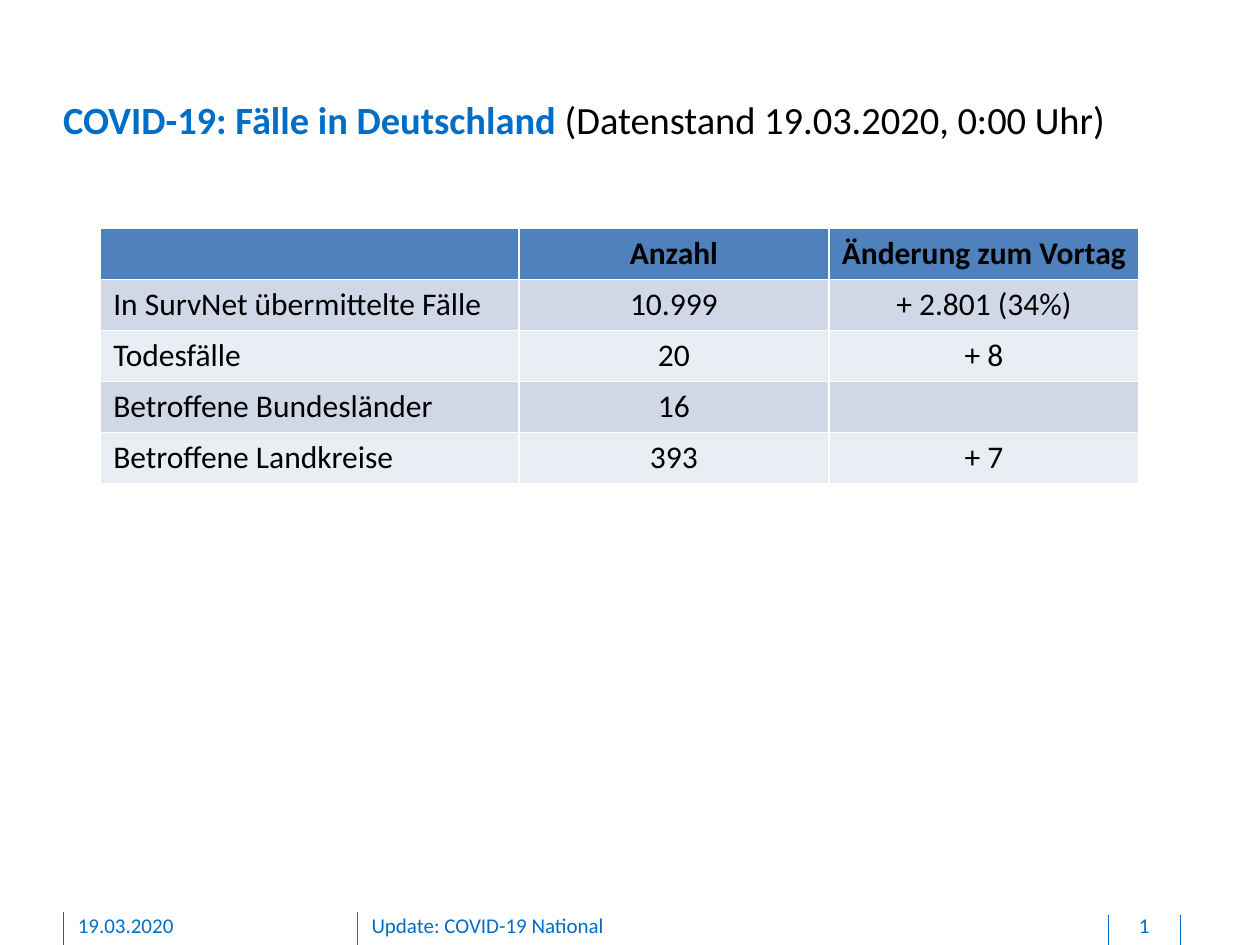
"""Build the COVID-19 case overview slide for Germany."""
from lxml.etree import SubElement
from pptx import Presentation
from pptx.dml.color import RGBColor
from pptx.enum.shapes import MSO_CONNECTOR
from pptx.enum.text import MSO_ANCHOR, PP_ALIGN
from pptx.oxml.ns import qn
from pptx.util import Cm, Pt

BLUE = RGBColor(0x00, 0x6E, 0xC7)
BLACK = RGBColor(0x00, 0x00, 0x00)
HEADER_FILL = RGBColor(0x4F, 0x81, 0xBD)
BAND_FILLS = (RGBColor(0xE9, 0xED, 0xF4), RGBColor(0xD0, 0xD8, 0xE8))
FONT = "Calibri"

TITLE = (
    ("COVID-19: Fälle in Deutschland ", BLUE, True),
    ("(Datenstand 19.03.2020, 0:00 Uhr)", BLACK, False),
)
CASES = (
    ("", "Anzahl", "Änderung zum Vortag"),
    ("In SurvNet übermittelte Fälle", "10.999", "+ 2.801 (34%)"),
    ("Todesfälle", "20", "+ 8"),
    ("Betroffene Bundesländer", "16", ""),
    ("Betroffene Landkreise", "393", "+ 7"),
)
COLUMN_WIDTHS = (8.43, 6.25, 6.25)
ROW_HEIGHT = 1.03
FOOTER = (
    ("19.03.2020", 1.57, 5.16, PP_ALIGN.LEFT),
    ("Update: COVID-19 National", 7.49, 14.4, PP_ALIGN.LEFT),
    ("1", 22.38, 1.37, PP_ALIGN.CENTER),
)
DIVIDERS = ((1.27, 18.39), (7.21, 18.39), (22.35, 18.44), (23.8, 18.44))
SLIDE_WIDTH, SLIDE_HEIGHT = 25.4, 19.05


def style(font, size, color, bold=False):
    font.name, font.size, font.bold = FONT, Pt(size), bold
    font.color.rgb = color


def set_margins(frame, bottom=0):
    frame.margin_left = frame.margin_top = frame.margin_right = 0
    frame.margin_bottom = Cm(bottom)
    frame.word_wrap = True


def add_title(slide):
    title = slide.shapes.title
    title.left, title.top, title.width, title.height = Cm(1.27), Cm(1.93), Cm(22.48), Cm(0.94)
    frame = title.text_frame
    set_margins(frame)
    frame.vertical_anchor = MSO_ANCHOR.MIDDLE
    heading = frame.paragraphs[0]
    heading.alignment = PP_ALIGN.LEFT
    for words, color, bold in TITLE:
        run = heading.add_run()
        run.text = words
        style(run.font, 22, color, bold)


def add_cases(slide):
    table = slide.shapes.add_table(
        len(CASES), len(COLUMN_WIDTHS), Cm(2.03), Cm(4.6),
        Cm(sum(COLUMN_WIDTHS)), Cm(ROW_HEIGHT * len(CASES)),
    ).table
    for column, width in zip(table.columns, COLUMN_WIDTHS):
        column.width = Cm(width)
    for row_index, entries in enumerate(CASES):
        table.rows[row_index].height = Cm(ROW_HEIGHT)
        is_header = row_index == 0
        for column_index, entry in enumerate(entries):
            cell = table.cell(row_index, column_index)
            cell.fill.solid()
            cell.fill.fore_color.rgb = HEADER_FILL if is_header else BAND_FILLS[row_index % 2]
            cell.text = entry
            paragraph = cell.text_frame.paragraphs[0]
            paragraph.alignment = PP_ALIGN.CENTER if column_index else PP_ALIGN.LEFT
            style(paragraph.font, 18, BLACK, is_header)


def add_footer(slide):
    for words, left, width, alignment in FOOTER:
        frame = slide.shapes.add_textbox(Cm(left), Cm(18.39), Cm(width), Cm(0.53)).text_frame
        set_margins(frame, bottom=0.13)
        frame.text = words
        frame.paragraphs[0].alignment = alignment
        style(frame.paragraphs[0].font, 12, BLUE)
    for x, top in DIVIDERS:
        divider = slide.shapes.add_connector(
            MSO_CONNECTOR.STRAIGHT, Cm(x), Cm(top), Cm(x), Cm(SLIDE_HEIGHT))
        divider.line.color.rgb = BLUE
        divider.line.width = Pt(0.5)
        SubElement(divider._element.spPr, qn("a:effectLst"))


def main():
    presentation = Presentation()
    presentation.slide_width, presentation.slide_height = Cm(SLIDE_WIDTH), Cm(SLIDE_HEIGHT)
    slide = presentation.slides.add_slide(presentation.slide_layouts[5])
    add_title(slide)
    add_cases(slide)
    add_footer(slide)
    presentation.save("out.pptx")


if __name__ == "__main__":
    main()
